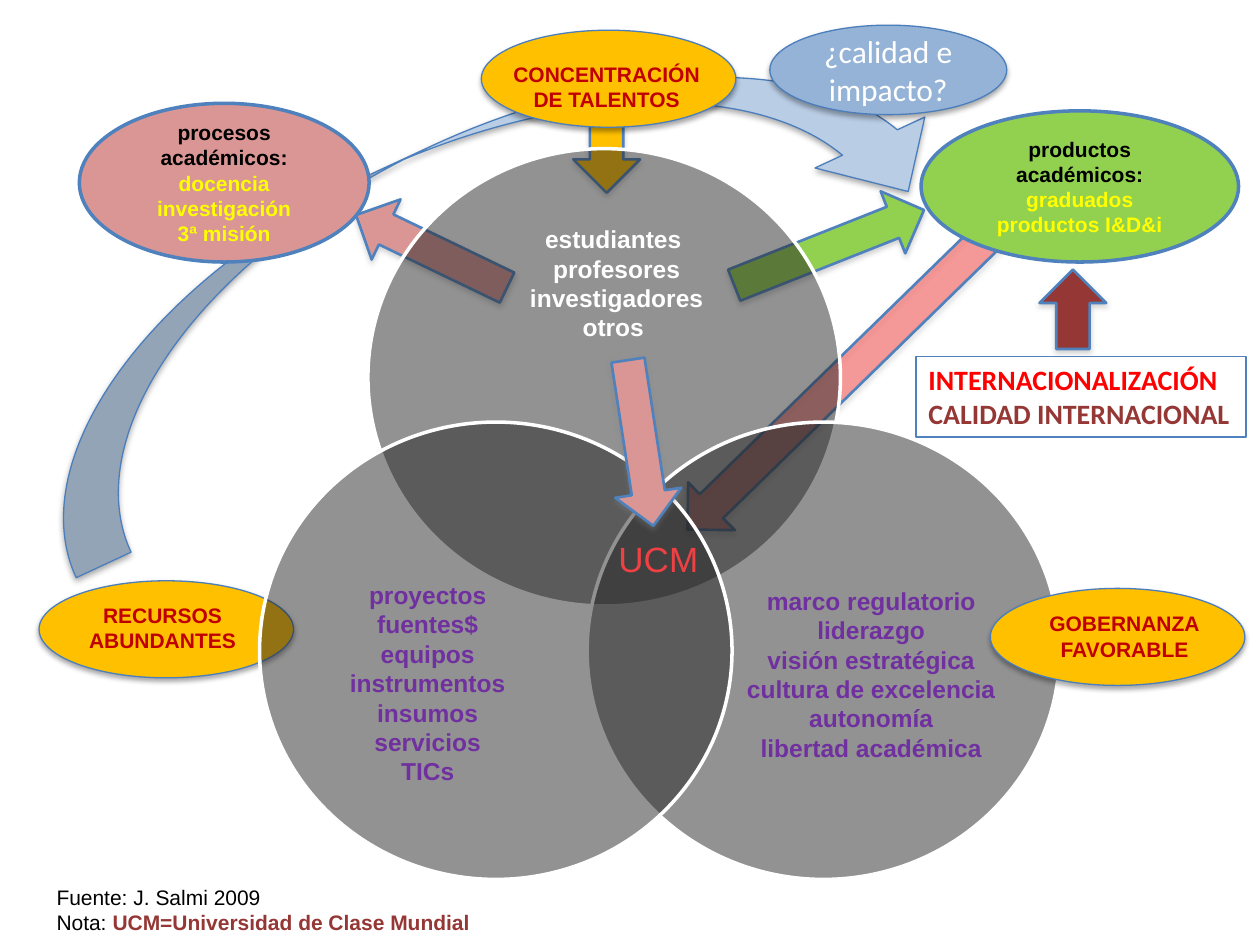
from dataclasses import dataclass
from typing import Optional

from lxml import etree
from pptx import Presentation
from pptx import util as u
from pptx.dml.color import RGBColor
from pptx.enum import shapes, text
from pptx.oxml import ns

WHITE = RGBColor(0xFF, 0xFF, 0xFF)
BLACK = RGBColor(0, 0, 0)
GREY = RGBColor(0x80, 0x80, 0x80)
CHARCOAL = RGBColor(0x26, 0x26, 0x26)
RED = RGBColor(0xFF, 0, 0)
CORAL = RGBColor(0xEF, 0x41, 0x44)
DARK_RED = RGBColor(0xC0, 0, 0)
MAROON = RGBColor(0x95, 0x37, 0x35)
ROSE = RGBColor(0xD9, 0x96, 0x94)
GOLD = RGBColor(0xFF, 0xC0, 0)
YELLOW = RGBColor(0xFF, 0xFF, 0)
GREEN = RGBColor(0x92, 0xD0, 0x50)
PURPLE = RGBColor(0x70, 0x30, 0xA0)
PALE_BLUE = RGBColor(0xB9, 0xCD, 0xE5)
SOFT_BLUE = RGBColor(0x95, 0xB3, 0xD7)
BLUE = RGBColor(0x4F, 0x81, 0xBD)
EDGE_BLUE = RGBColor(0x4B, 0x7E, 0xBC)

OVAL = shapes.MSO_SHAPE.OVAL
ARROW = shapes.MSO_SHAPE.LEFT_ARROW
CURVED_ARROW = shapes.MSO_SHAPE.CURVED_DOWN_ARROW
RECTANGLE = shapes.MSO_SHAPE.RECTANGLE
TOP, MIDDLE = text.MSO_ANCHOR.TOP, text.MSO_ANCHOR.MIDDLE
LEFT, CENTER = text.PP_ALIGN.LEFT, text.PP_ALIGN.CENTER


@dataclass(frozen=True)
class Run:
    words: str
    color: RGBColor
    bold: bool = True


@dataclass(frozen=True)
class Caption:
    lines: list[list[Run]]
    size: int
    font: str = "Arial"
    align: int = CENTER
    anchor: int = TOP
    wrap: bool = True


@dataclass(frozen=True)
class Figure:
    kind: int
    box: tuple[float, float, float, float]
    fill: Optional[RGBColor]
    line: RGBColor = BLUE
    weight: float = 1.5
    rotation: float = 0
    opacity: int = 100
    shadow: Optional[RGBColor] = None
    caption: Optional[Caption] = None


@dataclass(frozen=True)
class Label:
    box: tuple[float, float, float, float]
    caption: Caption


def plain_lines(color: RGBColor, *lines: str, bold: bool = True) -> list[list[Run]]:
    return [[Run(line, color, bold)] for line in lines]


def arrow(box: tuple, rotation: float, fill: RGBColor, opacity: int = 100) -> Figure:
    return Figure(ARROW, box, fill, rotation=rotation, opacity=opacity, shadow=GREY)


def badge(left: float, top: float) -> Figure:
    return Figure(OVAL, (left, top, 2.02, 0.77), GOLD, EDGE_BLUE, 0.75, shadow=BLACK)


def circle(left: float, top: float) -> Figure:
    return Figure(OVAL, (left, top, 3.75, 3.63), CHARCOAL, WHITE, 2, opacity=50)


def bubble(box: tuple, fill: RGBColor, lines: list[list[Run]]) -> Figure:
    return Figure(OVAL, box, fill, weight=2, caption=Caption(lines, 12, anchor=MIDDLE))


def add_alpha(color_element, percent: int) -> None:
    etree.SubElement(color_element, ns.qn("a:alpha"), val=str(percent * 1000))


def add_shadow(shape, color: RGBColor) -> None:
    effects = shape._element.spPr.find(ns.qn("a:effectLst"))
    outer = etree.SubElement(
        effects, ns.qn("a:outerShdw"), blurRad=str(u.Pt(3.1)), dist=str(u.Pt(1.8)),
        dir="5400000", rotWithShape="0")
    add_alpha(etree.SubElement(outer, ns.qn("a:srgbClr"), val=str(color)), 35)


def write_caption(shape, caption: Caption) -> None:
    frame = shape.text_frame
    frame.word_wrap = caption.wrap
    frame.vertical_anchor = caption.anchor
    for index, line in enumerate(caption.lines):
        paragraph = frame.add_paragraph() if index else frame.paragraphs[0]
        paragraph.alignment = caption.align
        for part in line:
            run = paragraph.add_run()
            run.text = part.words
            run.font.name = caption.font
            run.font.size = u.Pt(caption.size)
            run.font.bold = part.bold
            run.font.color.rgb = part.color


def draw_figure(slide, figure: Figure) -> None:
    shape = slide.shapes.add_shape(figure.kind, *map(u.Inches, figure.box))
    shape.rotation = figure.rotation
    shape.shadow.inherit = False
    if figure.fill is None:
        shape.fill.background()
    else:
        shape.fill.solid()
        shape.fill.fore_color.rgb = figure.fill
        if figure.opacity < 100:
            color = shape._element.spPr.find(ns.qn("a:solidFill"))[0]
            add_alpha(color, figure.opacity)
    shape.line.color.rgb = figure.line
    shape.line.width = u.Pt(figure.weight)
    if figure.shadow is not None:
        add_shadow(shape, figure.shadow)
    if figure.caption:
        write_caption(shape, figure.caption)


def draw_label(slide, label: Label) -> None:
    write_caption(slide.shapes.add_textbox(*map(u.Inches, label.box)), label.caption)


ITEMS = [
    arrow((4.88, 2.52, 4.06, 0.53), 315.7, RED, 36),
    arrow((8.2, 2.19, 0.63, 0.53), 90, MAROON),
    Figure(CURVED_ARROW, (-0.16, 1.12, 7.76, 1.92), PALE_BLUE, EDGE_BLUE, 0.75, 335.1,
           shadow=BLACK),
    arrow((5.77, 1.7, 1.62, 0.53), 158.4, GREEN),
    arrow((4.46, 0.91, 0.71, 0.53), 270, GOLD),
    badge(0.31, 4.61),
    badge(3.82, 0.24),
    arrow((2.76, 1.73, 1.33, 0.53), 25.7, ROSE),
    circle(2.92, 1.18),
    circle(4.66, 3.35),
    circle(2.06, 3.35),
    Label((3.53, 1.73, 2.73, 1.28), Caption(plain_lines(
        WHITE, "estudiantes ", "profesores", "investigadores", "otros "), 14)),
    Label((4.81, 4.22, 0.86, 0.44), Caption(
        plain_lines(CORAL, "UCM", bold=False), 20, align=LEFT)),
    Label((3.61, 0.44, 2.41, 0.5), Caption(
        plain_lines(DARK_RED, "CONCENTRACIÓN", "DE TALENTOS"), 12)),
    Label((0.35, 6.97, 3.62, 0.5), Caption(
        [[Run("Fuente: J. Salmi 2009", BLACK, False)],
         [Run("Nota: ", BLACK, False), Run("UCM=Universidad de Clase Mundial", MAROON)]],
        12, align=LEFT)),
    bubble((7.31, 0.88, 2.52, 1.2), GREEN,
           plain_lines(BLACK, "productos", "académicos:")
           + plain_lines(YELLOW, "graduados", "productos I&D&i")),
    bubble((0.63, 0.82, 2.3, 1.26), ROSE,
           plain_lines(BLACK, "procesos académicos:")
           + plain_lines(YELLOW, "docencia", "investigación", "3ª misión")),
    Label((0.6, 4.73, 1.38, 0.5), Caption(
        plain_lines(DARK_RED, "RECURSOS", "ABUNDANTES"), 12, wrap=False)),
    Figure(RECTANGLE, (7.27, 2.83, 2.62, 0.64), None, weight=0.75, caption=Caption(
        plain_lines(RED, "INTERNACIONALIZACIÓN")
        + plain_lines(MAROON, "CALIDAD INTERNACIONAL"),
        16, "Calibri", LEFT, wrap=False)),
    Label((2.23, 5.22, 2.33, 0.4), Caption(plain_lines(
        PURPLE, "proyectos", "fuentes$", "equipos", "instrumentos", "insumos",
        "servicios", "TICs"), 14, anchor=MIDDLE)),
    badge(7.86, 4.67),
    Label((8.22, 4.8, 1.41, 0.5), Caption(
        plain_lines(DARK_RED, "GOBERNANZA", "FAVORABLE"), 12, wrap=False)),
    Label((5.75, 5.15, 2.33, 0.4), Caption(plain_lines(
        PURPLE, "marco regulatorio", "liderazgo", "visión estratégica",
        "cultura de excelencia", "autonomía", "libertad académica"), 14, anchor=MIDDLE)),
    Figure(OVAL, (6.11, 0.2, 1.88, 0.71), SOFT_BLUE, EDGE_BLUE, 0.75, shadow=BLACK,
           caption=Caption(plain_lines(WHITE, "¿calidad e", "impacto?", bold=False),
                           18, "Calibri", anchor=MIDDLE)),
    arrow((4.42, 3.25, 1.33, 0.53), 261.3, ROSE),
]


def main() -> None:
    presentation = Presentation()
    presentation.slide_width = u.Inches(10)
    presentation.slide_height = u.Inches(7.5)
    slide = presentation.slides.add_slide(presentation.slide_layouts[6])
    for item in ITEMS:
        draw = draw_figure if isinstance(item, Figure) else draw_label
        draw(slide, item)
    presentation.save("out.pptx")


if __name__ == "__main__":
    main()
